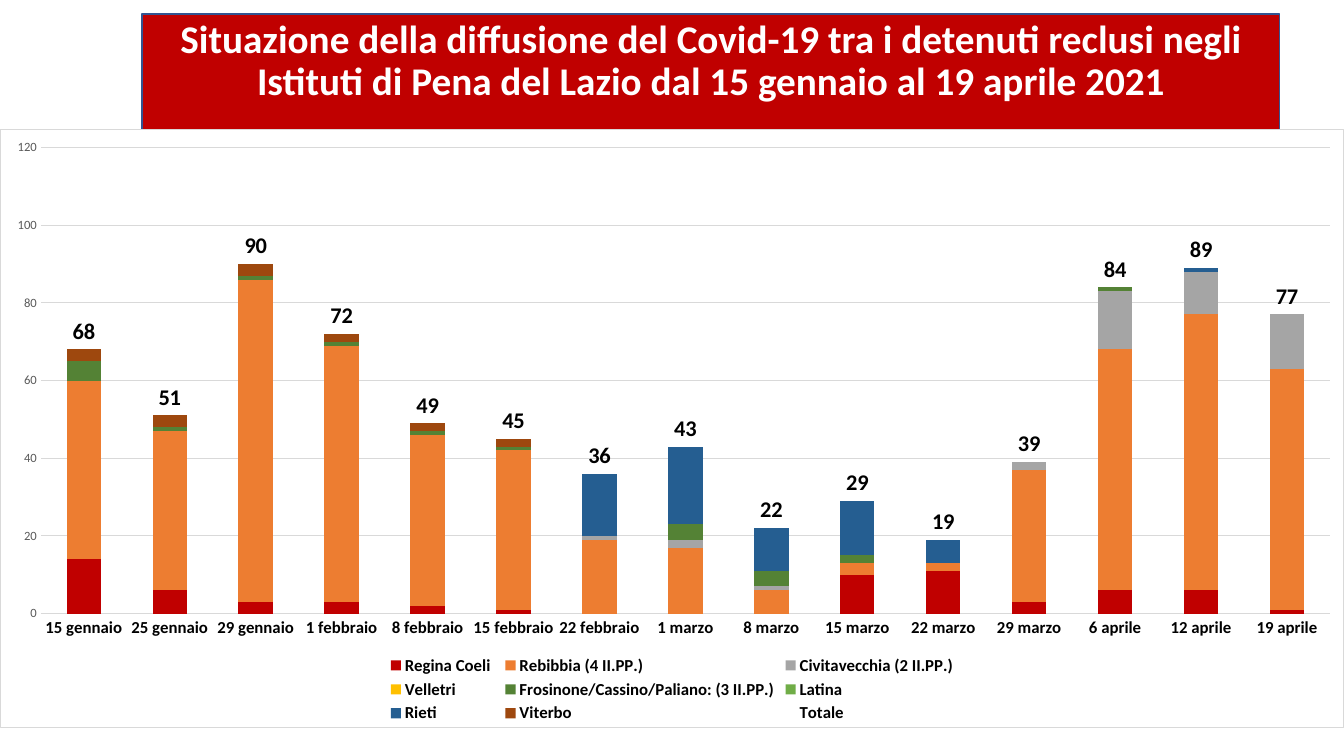
from lxml import etree
from pptx import Presentation
from pptx import util as u
from pptx.chart.data import CategoryChartData
from pptx.dml.color import RGBColor
from pptx.enum import chart as ch, text as tx
from pptx.oxml import parse_xml
from pptx.oxml.ns import nsdecls, qn

COLORS = {
    "red": "C00000", "orange": "ED7D31", "gray": "A5A5A5", "yellow": "FFC000",
    "forest": "548235", "green": "70AD47", "blue": "255E91", "brown": "9E480E",
    "border": "325491", "rule": "D9D9D9", "axis": "595959",
    "black": "000000", "white": "FFFFFF",
}

HEADING = ("Situazione della diffusione del Covid-19 tra i detenuti reclusi negli "
           "Istituti di Pena del Lazio dal 15 gennaio al 19 aprile 2021")

DATES = ["15 gennaio", "25 gennaio", "29 gennaio", "1 febbraio", "8 febbraio",
         "15 febbraio", "22 febbraio", "1 marzo", "8 marzo", "15 marzo",
         "22 marzo", "29 marzo", "6 aprile", "12 aprile", "19 aprile"]

NO_CASES = [0] * len(DATES)
PRISONS = [
    ("Regina Coeli ", "red", [14, 6, 3, 3, 2, 1, 0, 0, 0, 10, 11, 3, 6, 6, 1]),
    ("Rebibbia (4 II.PP.)", "orange",
     [46, 41, 83, 66, 44, 41, 19, 17, 6, 3, 2, 34, 62, 71, 62]),
    ("Civitavecchia (2 II.PP.)", "gray",
     [0, 0, 0, 0, 0, 0, 1, 2, 1, 0, 0, 2, 15, 11, 14]),
    ("Velletri", "yellow", NO_CASES),
    ("Frosinone/Cassino/Paliano: (3 II.PP.)", "forest",
     [5, 1, 1, 1, 1, 1, 0, 4, 4, 2, 0, 0, 1, 0, 0]),
    ("Latina", "green", NO_CASES),
    ("Rieti", "blue", [0, 0, 0, 0, 0, 0, 16, 20, 11, 14, 6, 0, 0, 1, 0]),
    ("Viterbo", "brown", [3, 3, 3, 2, 2, 2, 0, 0, 0, 0, 0, 0, 0, 0, 0]),
]
# The total is an unfilled series that carries the labels above each column
TOTALS = [sum(day) for day in zip(*(cases for _, _, cases in PRISONS))]


def rgb(name):
    return RGBColor.from_string(COLORS[name])


def format_font(font, size, color="black", bold=False, face="Calibri"):
    font.name, font.size, font.bold = face, u.Pt(size), bold
    font.color.rgb = rgb(color)


def write_text(frame, text, align=tx.PP_ALIGN.CENTER, spacing=0.9, **style):
    paragraph = frame.paragraphs[0]
    paragraph.alignment, paragraph.line_spacing = align, spacing
    paragraph.space_before = u.Pt(0)
    run = paragraph.add_run()
    run.text = text
    format_font(run.font, **style)


class SlideBuilder:
    def __init__(self, slide, face="Calibri", rule_width=0.75):
        self.slide, self.face, self.rule_width = slide, face, rule_width

    def rule(self, line):
        line.color.rgb = rgb("rule")
        line.width = u.Pt(self.rule_width)

    def banner(self, heading, box):
        title = self.slide.shapes.title
        title.left, title.top, title.width, title.height = map(u.Inches, box)
        title.fill.solid()
        title.fill.fore_color.rgb = rgb("red")
        title.line.color.rgb = rgb("border")
        title.line.width = u.Pt(1)
        frame = title.text_frame
        frame.word_wrap = True
        frame.auto_size = tx.MSO_AUTO_SIZE.NONE
        frame.vertical_anchor = tx.MSO_ANCHOR.TOP
        write_text(frame, heading, size=28, color="white", bold=True, face=self.face)

    def stacked_chart(self, box, plot_box):
        data = CategoryChartData()
        data.categories = DATES
        for prison, _, cases in PRISONS:
            data.add_series(prison, cases)
        data.add_series("Totale", TOTALS)
        chart = self.slide.shapes.add_chart(
            ch.XL_CHART_TYPE.COLUMN_STACKED, *map(u.Inches, box), data).chart
        format_font(chart.font, 10, face=self.face)
        chart.has_title = False

        # Columns
        plot = chart.plots[0]
        plot.gap_width, plot.overlap = 150, 100
        plot.vary_by_categories = False
        *prisons, total = plot.series
        for series, (_, color, _) in zip(prisons, PRISONS):
            series.format.fill.solid()
            series.format.fill.fore_color.rgb = rgb(color)
        total.format.fill.background()
        labels = total.data_labels
        labels.show_value = True
        labels.position = ch.XL_LABEL_POSITION.INSIDE_BASE
        format_font(labels.font, 16, bold=True, face=self.face)

        # Axes and legend
        dates, cases = chart.category_axis, chart.value_axis
        for axis in (dates, cases):
            axis.major_tick_mark = axis.minor_tick_mark = ch.XL_TICK_MARK.NONE
        format_font(dates.tick_labels.font, 12, bold=True, face=self.face)
        format_font(cases.tick_labels.font, 9, color="axis", face=self.face)
        self.rule(dates.format.line)
        cases.format.line.fill.background()
        cases.minimum_scale, cases.maximum_scale, cases.major_unit = 0, 120, 20
        cases.has_major_gridlines = True
        self.rule(cases.major_gridlines.format.line)
        chart.has_legend = True
        chart.legend.position = ch.XL_LEGEND_POSITION.BOTTOM
        chart.legend.include_in_layout = False
        format_font(chart.legend.font, 12, bold=True, face=self.face)

        self.chart_frame(chart.element, plot_box)

    def chart_frame(self, space, plot_box):
        # Background and border of the whole chart
        space.find(qn("c:chart")).addnext(parse_xml(
            f'<c:spPr {nsdecls("c", "a")}>'
            f'<a:solidFill><a:srgbClr val="{COLORS["white"]}"/></a:solidFill>'
            f'<a:ln w="{u.Pt(self.rule_width)}"><a:solidFill>'
            f'<a:srgbClr val="{COLORS["rule"]}"/></a:solidFill></a:ln></c:spPr>'))
        # Fixed inner plot area
        area = space.find(f'{qn("c:chart")}/{qn("c:plotArea")}')
        for automatic in area.findall(qn("c:layout")):
            area.remove(automatic)
        layout = etree.Element(qn("c:layout"))
        manual = etree.SubElement(layout, qn("c:manualLayout"))
        settings = [("layoutTarget", "inner"), ("xMode", "edge"), ("yMode", "edge"),
                    *zip("xywh", plot_box)]
        for tag, value in settings:
            etree.SubElement(manual, qn(f"c:{tag}")).set("val", str(value))
        area.insert(0, layout)


def main():
    deck = Presentation()
    deck.slide_width, deck.slide_height = u.Inches(13.33), u.Inches(7.5)
    title_only = deck.slide_layouts[5]
    builder = SlideBuilder(deck.slides.add_slide(title_only))
    builder.banner(HEADING, (1.41, 0.14, 11.28, 1.15))
    builder.stacked_chart((0, 1.28, 13.33, 5.94), (0.03, 0.03, 0.96, 0.78))
    deck.save("out.pptx")


if __name__ == "__main__":
    main()
